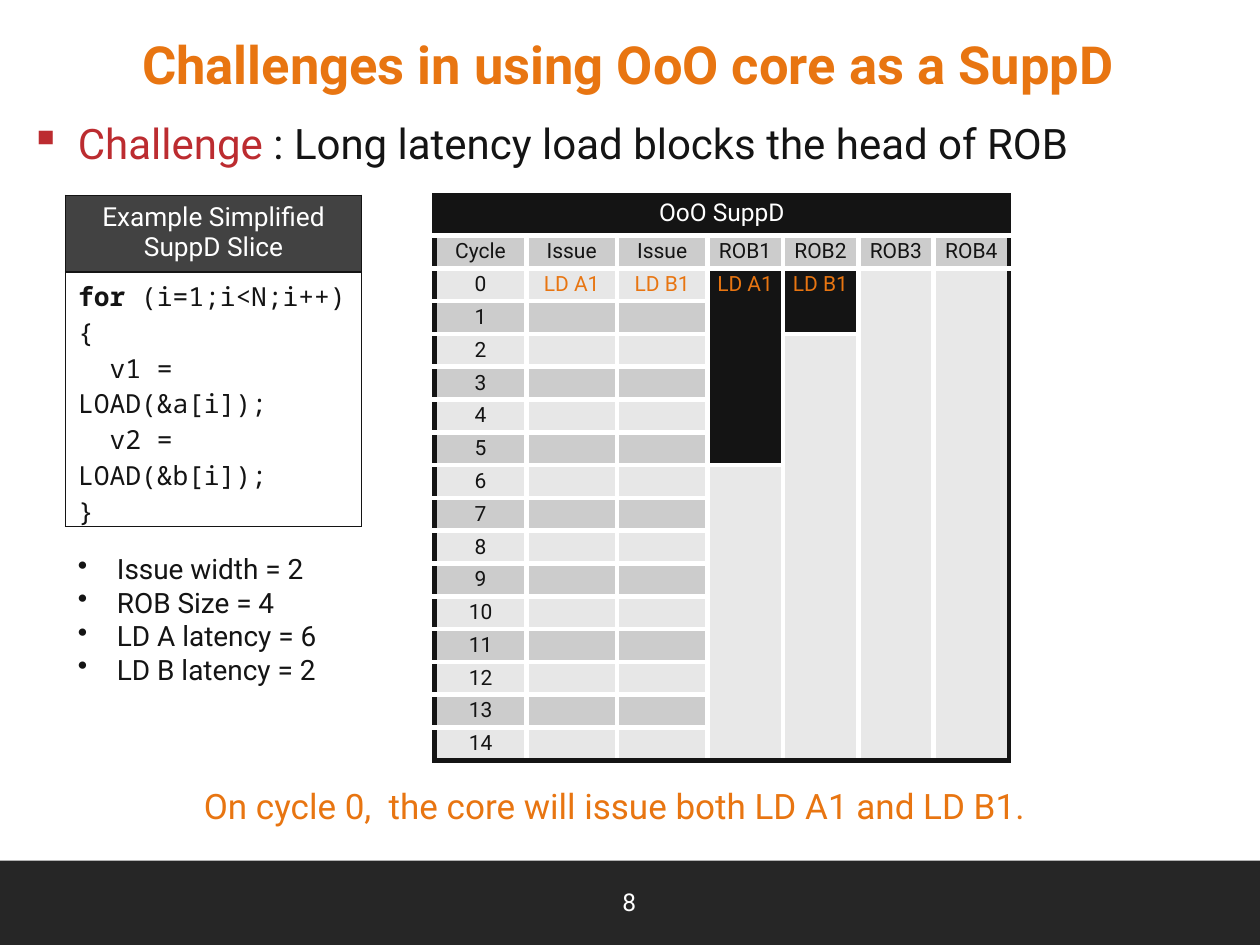
from lxml import etree
from pptx import Presentation
from pptx.dml.color import RGBColor
from pptx.enum.shapes import MSO_SHAPE
from pptx.enum.text import MSO_ANCHOR, PP_ALIGN
from pptx.oxml.ns import qn
from pptx.util import Inches, Pt

LEFT, CENTER = PP_ALIGN.LEFT, PP_ALIGN.CENTER
TOP, MIDDLE = MSO_ANCHOR.TOP, MSO_ANCHOR.MIDDLE
RECTANGLE = MSO_SHAPE.RECTANGLE
NO_STYLE = "{2D5ABB26-0587-4C30-8999-92F81FD0307C}"

THEME = {
    "sans": "Roboto", "mono": "Noto Sans Mono",
    "ink": "141414", "white": "FFFFFF", "orange": "E87511", "red": "BC2C30",
    "footer": "262626", "code_head": "424242",
    "dark_band": "CCCCCC", "light_band": "E7E7E7", "free": "E8E8E8",
    "title": 30, "point": 24, "message": 20, "note": 16, "code": 15,
    "heading": 14, "number": 14, "cell": 12,
}

# Left, top, width and height in percent of the slide
AREAS = {
    "footer": (0, 91.07, 100, 8.93),
    "title": (1.8, -0.27, 96.1, 14),
    "number": (38.3, 92.8, 23.3, 5.33),
    "challenge": (1.4, 11.73, 98.2, 68.27),
    "trace": (34.5, 20.67, 45.6, 58.8),
    "notes": (5.2, 57.73, 22.3, 15.73),
    "code": (5.2, 20.67, 23.5, 35.07),
    "message": (15.2, 82.4, 71.3, 5.87),
}


def write(frame, paragraphs, size="cell", color="ink", font="sans", bold=False,
          align=LEFT, anchor=TOP, bullet=None, indent=0):
    """Fill a text frame; each paragraph is a text or a list of (text, changes)."""
    frame.word_wrap = True
    frame.vertical_anchor = anchor
    for index, content in enumerate(paragraphs):
        paragraph = frame.paragraphs[0] if index == 0 else frame.add_paragraph()
        paragraph.alignment = align
        if bullet:
            properties = paragraph._p.get_or_add_pPr()
            properties.set("marL", str(Inches(indent)))
            properties.set("indent", str(-Inches(indent)))
            etree.SubElement(properties, qn("a:buChar")).set("char", bullet)
        runs = [(content, {})] if isinstance(content, str) else content
        for text, changes in runs:
            if text:
                run = paragraph.add_run()
                run.text = text
                run.font.name = THEME[font]
                run.font.size = Pt(THEME[size])
                run.font.bold = changes.get("bold", bold)
                run.font.color.rgb = RGBColor.from_string(THEME[changes.get("color", color)])
        paragraph._p.get_or_add_endParaRPr().set("sz", str(THEME[size] * 100))


def paint(cell, fill, edges, width, sides=0.1, top=0.03, bottom=0.03):
    """Set a cell's fill, margins and its left, right, top and bottom edge colours."""
    cell.margin_left = cell.margin_right = Inches(sides)
    cell.margin_top, cell.margin_bottom = Inches(top), Inches(bottom)
    properties = cell._tc.get_or_add_tcPr()
    for side, color in zip("LRTB", edges):
        line = etree.SubElement(properties, qn(f"a:ln{side}"), w=str(Pt(width)))
        solid = etree.SubElement(line, qn("a:solidFill"))
        etree.SubElement(solid, qn("a:srgbClr"), val=THEME[color])
    cell.fill.solid()
    cell.fill.fore_color.rgb = RGBColor.from_string(THEME[fill])


deck = Presentation()
deck.slide_width, deck.slide_height = Inches(10), Inches(7.5)
page = (deck.slide_width, deck.slide_height) * 2
area = {part: [round(share * length / 100) for share, length in zip(shares, page)]
        for part, shares in AREAS.items()}
slide = deck.slides.add_slide(deck.slide_layouts[5])
shapes = slide.shapes

# Footer and title
footer = shapes.add_shape(RECTANGLE, *area["footer"])
footer.shadow.inherit = False
footer.fill.solid()
footer.fill.fore_color.rgb = RGBColor.from_string(THEME["footer"])
footer.line.fill.background()

title = shapes.title
title.left, title.top, title.width, title.height = area["title"]
write(title.text_frame, ["Challenges in using OoO core as a SuppD"], size="title",
      color="orange", bold=True, align=CENTER, anchor=MIDDLE)

# Text around the tables
texts = {
    "number": (["8"], dict(size="number", color="white", align=CENTER, anchor=MIDDLE)),
    "challenge": ([[("Challenge", {"color": "red"}),
                    (" : Long latency load blocks the head of ROB", {})]],
                  dict(size="point", bullet="▪", indent=0.38)),
    "notes": (["Issue width = 2", "ROB Size = 4", "LD A latency = 6", "LD B latency = 2"],
              dict(size="note", bullet="•", indent=0.31)),
    "message": (["On cycle 0,  the core will issue both LD A1 and LD B1."],
                dict(size="message", color="orange")),
}
for part, (paragraphs, look) in texts.items():
    write(shapes.add_textbox(*area[part]).text_frame, paragraphs, **look)

# Both tables, with column and row shares
grids = {"trace": ([73, 72, 72, 60, 60, 60, 60], [5] + [4] * 16),
         "code": ([1], [3, 10])}
tables = {}
for part, (columns, rows) in grids.items():
    table = shapes.add_table(len(rows), len(columns), *area[part]).table
    table._tbl.tblPr.find(qn("a:tableStyleId")).text = NO_STYLE
    table.first_row = table.horz_banding = False
    for column, share in zip(table.columns, columns):
        column.width = round(area[part][2] * share / sum(columns))
    for row, share in zip(table.rows, rows):
        row.height = round(area[part][3] * share / sum(rows))
    tables[part] = table

# Code listing
listing_head, listing = tables["code"].cell(0, 0), tables["code"].cell(1, 0)
paint(listing_head, "code_head", ["ink"] * 4, 1, top=0.05, bottom=0.05)
write(listing_head.text_frame, ["Example Simplified SuppD Slice"], size="code",
      color="white", align=CENTER)
paint(listing, "white", ["ink"] * 4, 1, top=0.05, bottom=0)
listing.margin_right = Inches(0.03)
write(listing.text_frame,
      [[("for ", {"bold": True}), ("(i=1;i<N;i++)", {})], "{",
       "  v1 = LOAD(&a[i]);", "  v2 = LOAD(&b[i]);", "}"],
      size="code", font="mono")

# Cycle-by-cycle trace
trace = tables["trace"]
CYCLES, FIRST_ROB = 15, 3
headings = ["Cycle", "Issue", "Issue", "ROB1", "ROB2", "ROB3", "ROB4"]
loads = [("LD A1", 6), ("LD B1", 2)]  # text and latency
last_row, last_column = CYCLES + 1, len(headings) - 1

labels = {(0, 0): "OoO SuppD"}
labels.update({(1, column): text for column, text in enumerate(headings)})
labels.update({(cycle + 2, 0): str(cycle) for cycle in range(CYCLES)})
busy = set()
trace.cell(0, 0).merge(trace.cell(0, last_column))
for slot in range(4):
    column, free_row = FIRST_ROB + slot, 2
    if slot < len(loads):
        load, latency = loads[slot]
        free_row += latency
        labels[2, 1 + slot] = labels[2, column] = load
        busy.add((2, column))
        trace.cell(2, column).merge(trace.cell(free_row - 1, column))
    trace.cell(free_row, column).merge(trace.cell(last_row, column))

for row in range(last_row + 1):
    for column in range(last_column + 1):
        cell = trace.cell(row, column)
        in_rob = column >= FIRST_ROB
        if row == 0 or (row, column) in busy:
            fill = "ink"
        elif row > 1 and in_rob:
            fill = "free"
        else:
            fill = "dark_band" if row % 2 else "light_band"
        outer = (column == 0, column + cell.span_width - 1 == last_column,
                 row == 0, row + cell.span_height - 1 == last_row)
        edges = ["ink" if is_outer else "white" for is_outer in outer]
        paint(cell, fill, edges, 3, sides=0.02 if in_rob else 0.03 if row < 2 else 0.1)
        text = labels.get((row, column), "")
        color = "white" if row == 0 else "orange" if text.startswith("LD") else "ink"
        write(cell.text_frame, [text], size="cell" if row else "heading",
              color=color, align=CENTER, anchor=MIDDLE)

deck.save("out.pptx")
